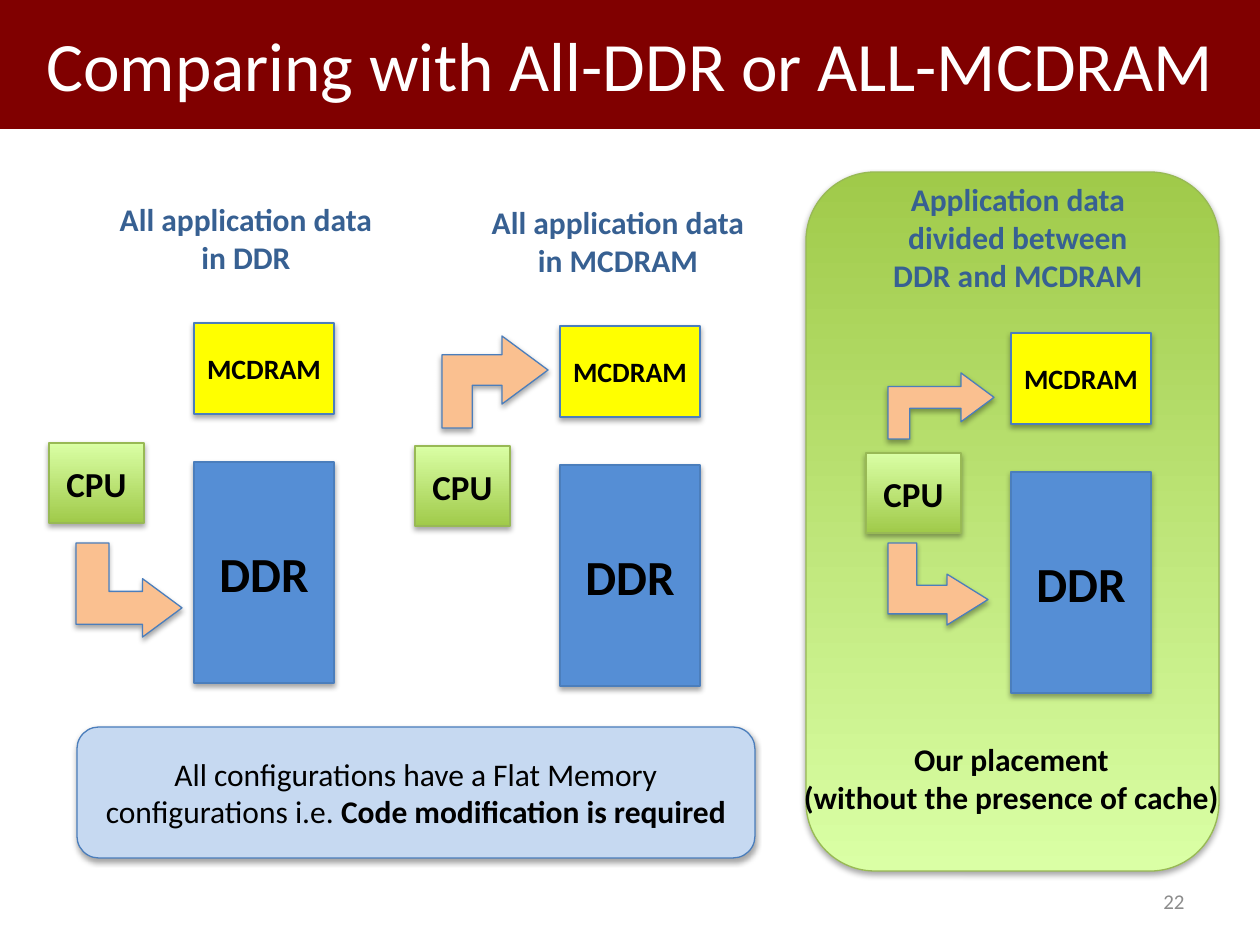
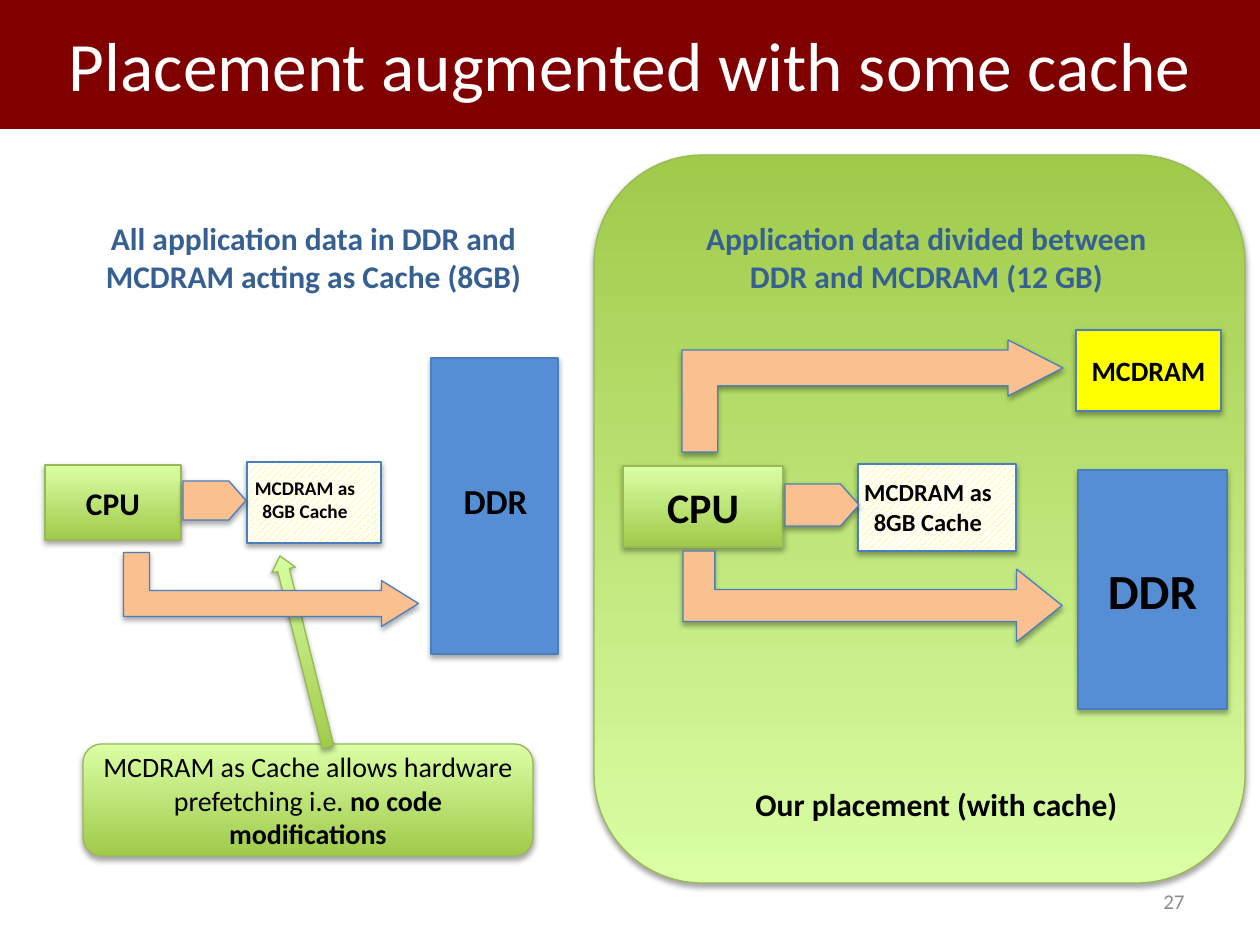
from dataclasses import dataclass
from typing import NamedTuple, Optional

from lxml import etree
from pptx import Presentation
from pptx.dml.color import RGBColor
from pptx.enum.dml import MSO_PATTERN as Pattern
from pptx.enum.shapes import MSO_SHAPE as Geom
from pptx.enum.text import MSO_ANCHOR as Anchor, MSO_AUTO_SIZE as Fit, PP_ALIGN as Align
from pptx.oxml.ns import qn
from pptx.util import Emu, Pt

FONT = "Calibri"
MAROON = RGBColor(0x80, 0x00, 0x00)
WHITE = RGBColor(0xFF, 0xFF, 0xFF)
BLACK = RGBColor(0x00, 0x00, 0x00)
GREY = RGBColor(0x8C, 0x8C, 0x8C)
NAVY = RGBColor(0x37, 0x60, 0x92)
EDGE = RGBColor(0x4B, 0x7E, 0xBC)
BLUE = RGBColor(0x55, 0x8E, 0xD5)
PALE = RGBColor(0xC6, 0xD9, 0xF1)
PEACH = RGBColor(0xFA, 0xC0, 0x90)
YELLOW = RGBColor(0xFF, 0xFF, 0x00)
LEAF = RGBColor(0xA0, 0xCA, 0x4A)
LIME = RGBColor(0xDA, 0xFF, 0xA5)
MOSS = RGBColor(0x98, 0xB9, 0x55)

PX = 914400 / 126
WIDE, HIGH = 1260, 945


class Look(NamedTuple):
    """A solid fill, a gradient up to 'fade', or stripes on 'back'."""
    fill: RGBColor
    line: RGBColor = EDGE
    fade: Optional[RGBColor] = None
    back: Optional[RGBColor] = None


GREEN = Look(LEAF, MOSS, fade=LIME)
DDR = Look(BLUE)
FAST = Look(YELLOW)
CACHE = Look(YELLOW, back=WHITE)
NOTE = Look(PALE)
FLOW = Look(PEACH)


class Area(NamedTuple):
    x: int
    y: int
    w: int
    h: int


@dataclass
class Words:
    """Text whose 'lead' part stays regular before the main part."""
    text: str
    size: float = 18
    color: RGBColor = BLACK
    bold: bool = True
    lead: str = ""
    align: Align = Align.CENTER
    anchor: Anchor = Anchor.TOP


@dataclass
class Block:
    area: Area
    look: Look
    geom: Geom = Geom.RECTANGLE
    words: Optional[Words] = None
    turn: float = 0
    adj: tuple = ()


@dataclass
class Label:
    area: Area
    words: Words


def place(shape, area: Area) -> None:
    for name, size in zip(("left", "top", "width", "height"), area):
        setattr(shape, name, Emu(round(size * PX)))


def write(frame, words: Words) -> None:
    form = {"word_wrap": True, "auto_size": Fit.NONE, "vertical_anchor": words.anchor}
    for name, value in form.items():
        setattr(frame, name, value)
    for num, line in enumerate(words.text.split("\n")):
        para = frame.paragraphs[0] if num == 0 else frame.add_paragraph()
        para.alignment = words.align
        for text, bold in ((words.lead, False), (line, words.bold)):
            if not text:
                continue
            run = para.add_run()
            run.text = text
            run.font.color.rgb = words.color
            for name, value in {"name": FONT, "size": Pt(words.size), "bold": bold}.items():
                setattr(run.font, name, value)


def shade(shape) -> None:
    """Cast a soft shadow straight down."""
    shape.shadow.inherit = False
    glow = shape.element.spPr.find(qn("a:effectLst"))
    drop = etree.SubElement(glow, qn("a:outerShdw"), blurRad="40000", dist="23000",
                            dir="5400000", rotWithShape="0")
    tint = etree.SubElement(drop, qn("a:srgbClr"), val=str(BLACK))
    etree.SubElement(tint, qn("a:alpha"), val="35000")


def paint(shape, look: Look) -> None:
    fill = shape.fill
    if look.fade is not None:
        fill.gradient()
        fill.gradient_angle = 90
        for stop, color in zip(fill.gradient_stops, (look.fill, look.fade)):
            stop.color.rgb = color
    elif look.back is not None:
        fill.patterned()
        fill.pattern = Pattern.WIDE_UPWARD_DIAGONAL
        fill.fore_color.rgb = look.fill
        fill.back_color.rgb = look.back
    else:
        fill.solid()
        fill.fore_color.rgb = look.fill
    shape.line.color.rgb = look.line
    shape.line.width = Pt(0.75)
    shade(shape)


def draw(slide, item) -> None:
    if isinstance(item, Label):
        shape = slide.shapes.add_textbox(0, 0, 0, 0)
        place(shape, item.area)
        write(shape.text_frame, item.words)
        return
    shape = slide.shapes.add_shape(item.geom, 0, 0, 0, 0)
    place(shape, item.area)
    shape.rotation = item.turn
    for num, value in enumerate(item.adj):
        shape.adjustments[num] = value
    paint(shape, item.look)
    if item.words:
        write(shape.text_frame, item.words)


def box(area: Area, look: Look, text: str = "", size: float = 18) -> Block:
    words = Words(text, size, anchor=Anchor.MIDDLE) if text else None
    return Block(area, look, words=words)


def panel(area: Area) -> Block:
    return Block(area, GREEN, Geom.ROUNDED_RECTANGLE, turn=180)


def note(area: Area, look: Look, size: float, lead: str, text: str) -> Block:
    words = Words(text, size, lead=lead, anchor=Anchor.MIDDLE)
    return Block(area, look, Geom.ROUNDED_RECTANGLE, words)


def head(area: Area, text: str) -> Label:
    return Label(area, Words(text, color=NAVY))


def rise(area: Area, *adj: float) -> Block:
    """Arrow that goes up and then right."""
    return Block(area, FLOW, Geom.BENT_ARROW, adj=(*adj, 0))


def sink(area: Area, *adj: float) -> Block:
    """Arrow that goes down and then right; the area is the one before turning."""
    return Block(area, FLOW, Geom.BENT_UP_ARROW, turn=90, adj=adj)


def feed(area: Area) -> Block:
    """Short arrow from CPU to cache."""
    return rise(area, 1, 0.5, 0.44)


def setup(x: int, y: int) -> list:
    """CPU beside MCDRAM over DDR."""
    return [
        box(Area(x + 145, y + 139, 140, 221), DDR, "DDR", 28),
        box(Area(x, y + 120, 95, 80), GREEN, "CPU", 20),
        box(Area(x + 145, y, 140, 91), FAST, "MCDRAM", 16),
    ]


def build(deck, title: str, number: str, items: list) -> None:
    slide = deck.slides.add_slide(deck.slide_layouts.get_by_name("Title Only"))
    band = slide.shapes.title
    place(band, Area(0, -1, WIDE, 130))
    band.fill.solid()
    band.fill.fore_color.rgb = MAROON
    write(band.text_frame, Words(title, 39.6, WHITE, False, anchor=Anchor.MIDDLE))
    page = Words(number, 12, GREY, False, align=Align.RIGHT, anchor=Anchor.MIDDLE)
    for item in [*items, Label(Area(903, 876, 294, 50), page)]:
        draw(slide, item)


COMPARE = [
    panel(Area(806, 172, 413, 699)),
    head(Area(106, 194, 280, 89), "All application data in DDR"),
    head(Area(478, 197, 280, 89), "All application data in MCDRAM"),
    head(Area(866, 174, 304, 127), "Application data divided between DDR and MCDRAM"),
    *setup(49, 323),
    *setup(415, 326),
    *setup(866, 333),
    sink(Area(82, 537, 94, 106), 0.35, 0.31, 0.42),
    rise(Area(442, 336, 106, 92), 0.33, 0.37, 0.5),
    rise(Area(888, 373, 106, 66), 0.33, 0.37, 0.5),
    sink(Area(897, 534, 82, 100), 0.35, 0.31, 0.5),
    Label(Area(777, 734, 469, 89), Words("Our placement\n(without the presence of cache)")),
    note(Area(77, 727, 678, 131), NOTE, 18,
         "All configurations have a Flat Memory configurations i.e. ",
         "Code modification is required"),
]

CACHED = [
    panel(Area(594, 155, 651, 728)),
    Label(Area(627, 779, 619, 50), Words("Our placement (with cache)")),
    head(Area(45, 213, 537, 89), "All application data in DDR and MCDRAM acting as Cache (8GB)"),
    head(Area(682, 213, 489, 89), "Application data divided between DDR and MCDRAM (12 GB)"),
    box(Area(431, 358, 127, 296), DDR),
    Label(Area(430, 473, 131, 55), Words("DDR", 20)),
    box(Area(247, 462, 134, 81), CACHE),
    Label(Area(238, 470, 134, 59), Words("MCDRAM as 8GB Cache", 11)),
    note(Area(83, 744, 450, 112), GREEN, 16,
         "MCDRAM as Cache allows hardware prefetching i.e. ", "no code modifications"),
    Block(Area(292, 553, 24, 197), GREEN, Geom.UP_ARROW, turn=345.9, adj=(0.5, 0.6)),
    box(Area(45, 465, 136, 75), GREEN, "CPU"),
    sink(Area(234, 442, 74, 295), 0.35, 0.31, 0.5),
    feed(Area(183, 481, 63, 39)),
    box(Area(1078, 470, 149, 239), DDR, "DDR", 28),
    box(Area(858, 464, 158, 87), CACHE),
    Label(Area(849, 471, 158, 72), Words("MCDRAM as 8GB Cache", 14)),
    box(Area(623, 466, 160, 81), GREEN, "CPU", 24),
    sink(Area(827, 407, 91, 379), 0.35, 0.4, 0.5),
    feed(Area(785, 484, 74, 42)),
    rise(Area(682, 340, 381, 112), 0.32, 0.25, 0.49),
    box(Area(1076, 330, 145, 81), FAST, "MCDRAM", 16),
]


def main() -> None:
    deck = Presentation()
    deck.slide_width = Emu(round(WIDE * PX))
    deck.slide_height = Emu(round(HIGH * PX))
    build(deck, "Comparing with All-DDR or ALL-MCDRAM", "22", COMPARE)
    build(deck, "Placement augmented with some cache", "27", CACHED)
    deck.save("out.pptx")


if __name__ == "__main__":
    main()
